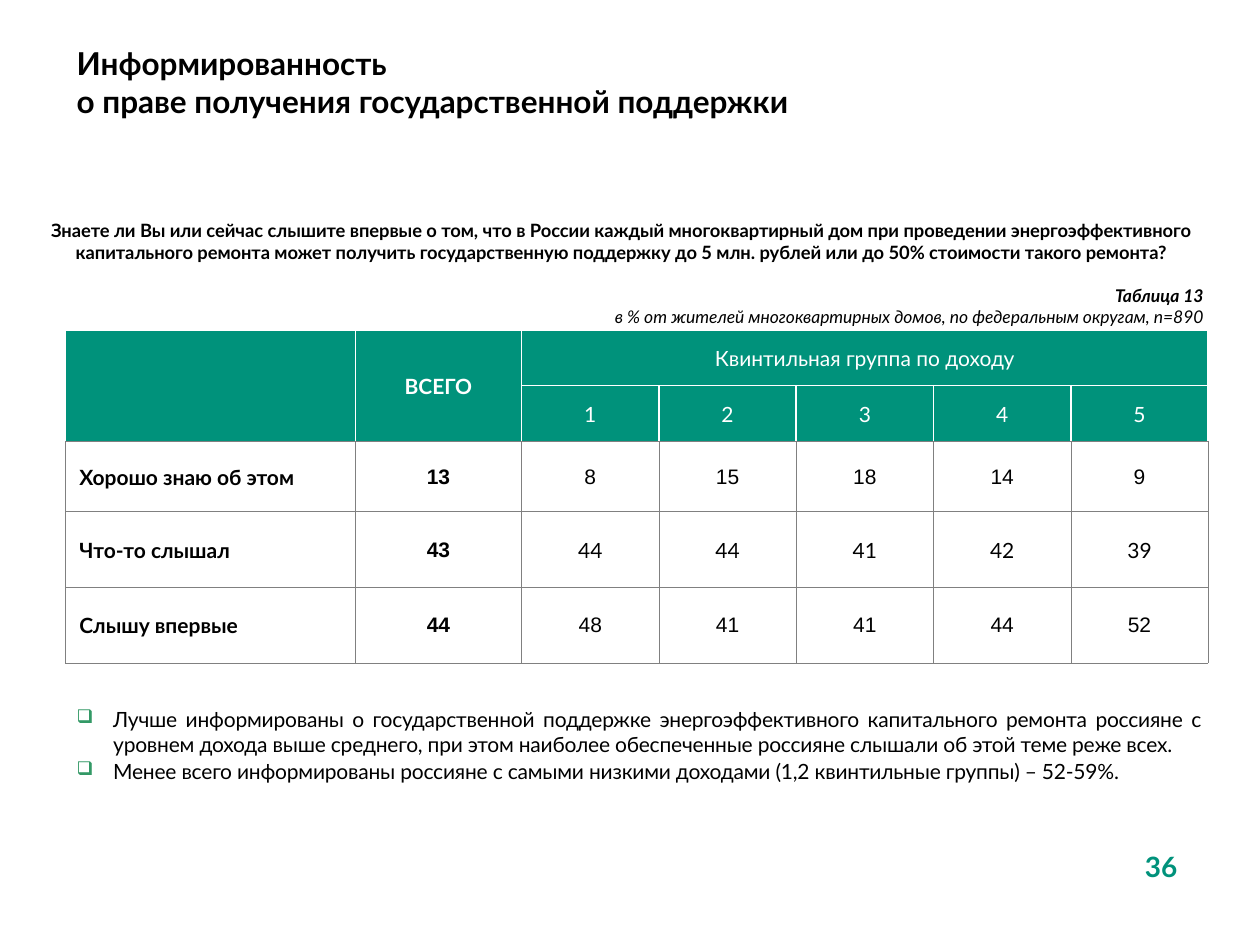
from dataclasses import dataclass

from lxml import etree
from pptx import Presentation
from pptx.dml.color import RGBColor
from pptx.enum.text import MSO_ANCHOR, PP_ALIGN
from pptx.oxml.ns import qn
from pptx.util import Inches, Pt

LEFT, CENTER, RIGHT, JUSTIFY = PP_ALIGN.LEFT, PP_ALIGN.CENTER, PP_ALIGN.RIGHT, PP_ALIGN.JUSTIFY
TOP, MIDDLE, BOTTOM = MSO_ANCHOR.TOP, MSO_ANCHOR.MIDDLE, MSO_ANCHOR.BOTTOM

COLORS = {"text": "000000", "accent": "00927B", "white": "FFFFFF",
          "grid": "808080", "bullet": "339966"}
MAIN_FONT, NUMBER_FONT = "Lato", "Arial"

COLUMN_WIDTHS = [2.3, 1.32] + [1.09] * 5
ROW_HEIGHTS = [0.44, 0.44, 0.56, 0.6, 0.6]
HEADER_ROWS = 2


@dataclass
class Answer:
    label: str
    total: int
    by_group: list[int]
    group_font: str = NUMBER_FONT


ANSWERS = [
    Answer("Хорошо знаю об этом", 13, [8, 15, 18, 14, 9]),
    Answer("Что-то слышал", 43, [44, 44, 41, 42, 39], MAIN_FONT),
    Answer("Слышу впервые", 44, [48, 41, 41, 44, 52]),
]

FINDINGS = [
    "Лучше информированы о государственной поддержке энергоэффективного капитального ремонта "
    "россияне с уровнем дохода выше среднего, при этом наиболее обеспеченные россияне слышали "
    "об этой теме реже всех.",
    "Менее всего информированы россияне с самыми низкими доходами (1,2 квинтильные группы) "
    "– 52-59%.",
]


def write_text(paragraph, text: str, *, size: float = 12, font: str = MAIN_FONT,
               color: str = "text", bold: bool = False, italic: bool = False,
               align=LEFT, spacing: float = 0) -> None:
    """Fill a paragraph; a vertical tab in the text becomes a line break."""
    paragraph.text = text
    paragraph.alignment = align
    for run in paragraph.runs:
        run.font.size = Pt(size)
        run.font.name = font
        run.font.bold = bold
        run.font.italic = italic
        run.font.color.rgb = RGBColor.from_string(COLORS[color])
        if spacing:
            run.font._element.set("spc", str(round(spacing * 100)))


def add_text_frame(slide, left: float, top: float, width: float, height: float, anchor=TOP):
    box = slide.shapes.add_textbox(Inches(left), Inches(top), Inches(width), Inches(height))
    frame = box.text_frame
    frame.word_wrap = True
    frame.vertical_anchor = anchor
    return frame


def add_bullet(paragraph) -> None:
    properties = paragraph._p.get_or_add_pPr()
    properties.set("marL", str(Inches(0.29)))
    properties.set("indent", str(-Inches(0.29)))
    color = etree.SubElement(properties, qn("a:buClr"))
    etree.SubElement(color, qn("a:srgbClr"), val=COLORS["bullet"])
    etree.SubElement(properties, qn("a:buSzPct"), val="90000")
    etree.SubElement(properties, qn("a:buChar"), char="❑")


def set_borders(cell, sides: str, color: str, width: float) -> None:
    """Draw the sides, given as letters in the order L, R, T, B."""
    properties = cell._tc.get_or_add_tcPr()
    for side in sides:
        line = etree.SubElement(properties, qn(f"a:ln{side}"), w=str(Pt(width)))
        fill = etree.SubElement(line, qn("a:solidFill"))
        etree.SubElement(fill, qn("a:srgbClr"), val=COLORS[color])


def style_cell(cell, row: int, column: int) -> None:
    cell.vertical_anchor = MIDDLE
    cell.margin_left = cell.margin_right = cell.margin_top = Inches(0.01)
    cell.margin_bottom = 0
    if row < HEADER_ROWS:
        set_borders(cell, "LRT", "white", 1)
        if row == 0 and column >= 2:
            set_borders(cell, "B", "white", 1)
        else:
            set_borders(cell, "B", "grid", 0.25)
    else:
        set_borders(cell, "LRTB", "grid", 0.25)
    if row >= HEADER_ROWS and column >= 2:
        cell.fill.background()
    else:
        cell.fill.solid()
        fill_name = "accent" if row < HEADER_ROWS else "white"
        cell.fill.fore_color.rgb = RGBColor.from_string(COLORS[fill_name])


def write_cell(cell, text: str, **text_format) -> None:
    write_text(cell.text_frame.paragraphs[0], text, **{"align": CENTER, **text_format})


def add_answer_table(slide) -> None:
    frame = slide.shapes.add_table(
        len(ROW_HEIGHTS), len(COLUMN_WIDTHS), Inches(0.52), Inches(2.62),
        Inches(sum(COLUMN_WIDTHS)), Inches(sum(ROW_HEIGHTS)))
    table = frame.table
    table.first_row = table.horz_banding = False
    for column, width in zip(table.columns, COLUMN_WIDTHS):
        column.width = Inches(width)
    for row, height in zip(table.rows, ROW_HEIGHTS):
        row.height = Inches(height)
    for row in range(len(ROW_HEIGHTS)):
        for column in range(len(COLUMN_WIDTHS)):
            style_cell(table.cell(row, column), row, column)

    for column in (0, 1):
        table.cell(0, column).merge(table.cell(1, column))
    table.cell(0, 2).merge(table.cell(0, len(COLUMN_WIDTHS) - 1))
    write_cell(table.cell(0, 1), "ВСЕГО", color="white", bold=True)
    write_cell(table.cell(0, 2), "Квинтильная группа по доходу", color="white")
    for group in range(1, 6):
        write_cell(table.cell(1, group + 1), str(group), color="white")

    for row, answer in enumerate(ANSWERS, HEADER_ROWS):
        label_cell = table.cell(row, 0)
        label_cell.margin_left = Inches(0.11)
        write_cell(label_cell, answer.label, bold=True, align=LEFT)
        write_cell(table.cell(row, 1), str(answer.total), font=NUMBER_FONT, bold=True)
        for column, value in enumerate(answer.by_group, 2):
            write_cell(table.cell(row, column), str(value), font=answer.group_font)


def add_findings(slide) -> None:
    frame = add_text_frame(slide, 0.51, 5.56, 9.13, 1.02)
    for index, finding in enumerate(FINDINGS):
        paragraph = frame.add_paragraph() if index else frame.paragraphs[0]
        add_bullet(paragraph)
        write_text(paragraph, finding, align=JUSTIFY, spacing=-0.1)
        if index:
            paragraph.space_before = Pt(1)


def main() -> None:
    presentation = Presentation()
    presentation.slide_width, presentation.slide_height = Inches(10), Inches(7.5)
    slide = presentation.slides.add_slide(presentation.slide_layouts[6])

    add_findings(slide)

    caption = add_text_frame(slide, 0.82, 2.21, 8.83, 0.44)
    write_text(caption.paragraphs[0], "Таблица 13", size=10, bold=True, italic=True, align=RIGHT)
    write_text(caption.add_paragraph(),
               "в % от жителей многоквартирных домов, по федеральным округам, n=890",
               size=10, italic=True, align=RIGHT)

    page_number = add_text_frame(slide, 8.78, 6.69, 0.87, 0.52)
    write_text(page_number.paragraphs[0], "36", size=16, color="accent", bold=True, align=CENTER)

    question = add_text_frame(slide, 0.27, 1.68, 9.33, 0.63, BOTTOM)
    question.margin_bottom = Inches(0.22)
    write_text(question.paragraphs[0],
               "Знаете ли Вы или сейчас слышите впервые о том, что в России каждый "
               "многоквартирный дом при проведении энергоэффективного капитального ремонта "
               "может получить государственную поддержку до 5 млн. рублей или до 50% "
               "стоимости такого ремонта?", size=10.5, bold=True, align=CENTER)

    title = add_text_frame(slide, 0.51, 0.3, 7.65, 0.71)
    write_text(title.paragraphs[0],
               "Информированность\vо праве получения государственной поддержки",
               size=18, bold=True)

    add_answer_table(slide)
    presentation.save("out.pptx")


if __name__ == "__main__":
    main()
